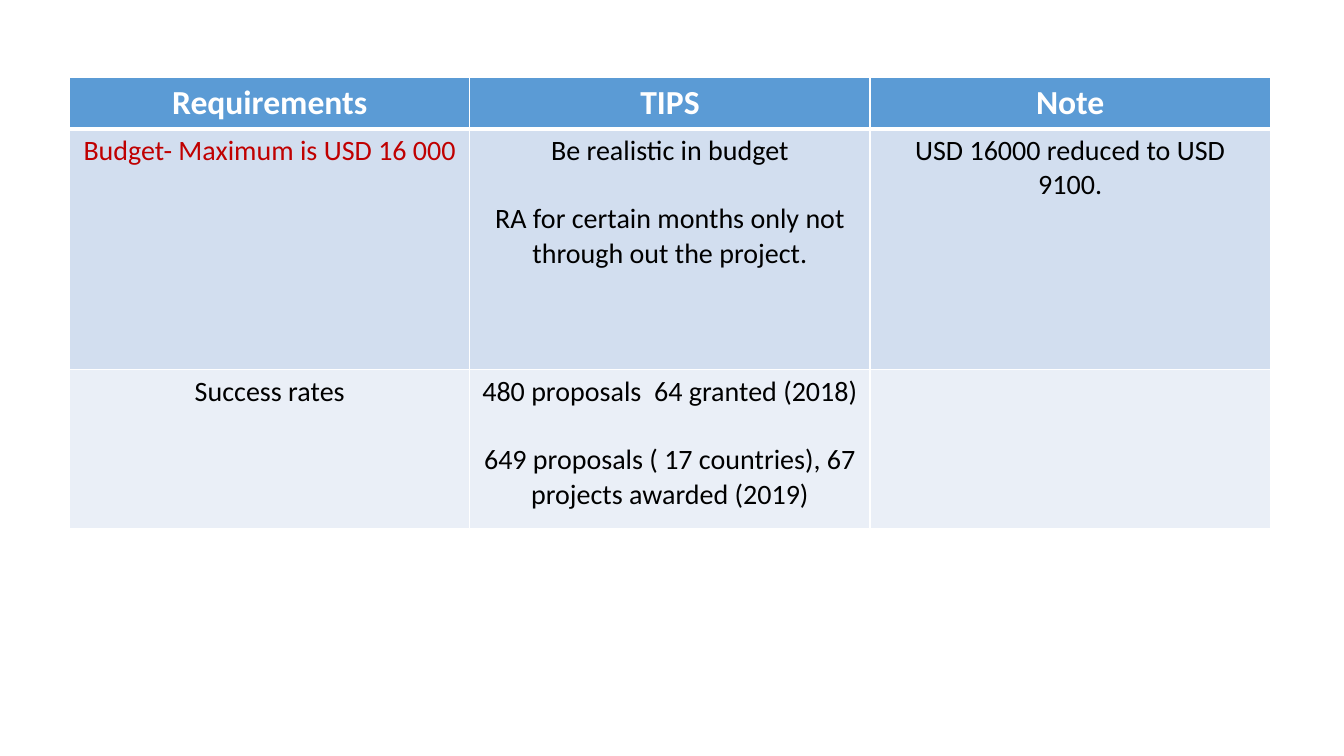
from dataclasses import dataclass

from lxml.etree import SubElement
from pptx import Presentation
from pptx.dml.color import RGBColor
from pptx.enum.text import PP_ALIGN
from pptx.oxml.ns import qn
from pptx.util import Inches, Pt


@dataclass(frozen=True)
class Theme:
    """Colours, type sizes and line widths of the slide."""
    font: str = "Calibri"
    head: str = "5B9BD5"
    bands: tuple = ("D2DEEF", "EAEFF7")
    white: str = "FFFFFF"
    ink: str = "000000"
    alert: str = "C00000"
    large: int = 24
    body: int = 20
    gap: float = 24.4
    thin: int = 1
    thick: int = 3


THEME = Theme()
LEFT, TOP, COL = 0.69, 0.77, 3.97
ROWS = (0.49, 2.39, 1.58)
CELLS = (
    (("Requirements",), ("TIPS",), ("Note",)),
    (
        ("Budget- Maximum is USD 16 000",),
        ("Be realistic in budget",
         "RA for certain months only not through out the project."),
        ("USD 16000 reduced to USD 9100.",),
    ),
    (
        ("Success rates",),
        ("480 proposals  64 granted (2018)",
         "649 proposals ( 17 countries), 67 projects awarded (2019)"),
        (),
    ),
)


def edge(cell, row):
    """Draw white cell borders, thick between header and body."""
    widths = {"L": THEME.thin, "R": THEME.thin,
              "T": THEME.thick if row == 1 else THEME.thin,
              "B": THEME.thick if row == 0 else THEME.thin}
    props = cell._tc.get_or_add_tcPr()
    for side, width in widths.items():
        line = SubElement(props, qn(f"a:ln{side}"), w=str(Pt(width)))
        fill = SubElement(line, qn("a:solidFill"))
        SubElement(fill, qn("a:srgbClr"), val=THEME.white)


def paint(cell, color):
    """Fill a cell with one colour."""
    cell.fill.solid()
    cell.fill.fore_color.rgb = RGBColor.from_string(color)


def write(cell, lines, size, color, bold):
    """Write centred paragraphs with a gap between them."""
    frame = cell.text_frame
    frame.text = "\n".join(lines)
    for index, para in enumerate(frame.paragraphs):
        para.alignment = PP_ALIGN.CENTER
        para.space_before = Pt(THEME.gap if index else 0)
        para.font.name = THEME.font
        para.font.size = Pt(size)
        para.font.bold = bold
        para.font.color.rgb = RGBColor.from_string(color)


def grid(slide):
    """Add the table of requirements, tips and notes."""
    count = len(CELLS[0])
    table = slide.shapes.add_table(
        len(ROWS), count, Inches(LEFT), Inches(TOP),
        Inches(COL * count), Inches(sum(ROWS))).table
    for column in table.columns:
        column.width = Inches(COL)
    for row, height in enumerate(ROWS):
        table.rows[row].height = Inches(height)
        for col, lines in enumerate(CELLS[row]):
            cell = table.cell(row, col)
            edge(cell, row)
            if row == 0:
                paint(cell, THEME.head)
                write(cell, lines, THEME.large, THEME.white, True)
            else:
                paint(cell, THEME.bands[row - 1])
                color = THEME.alert if (row, col) == (1, 0) else THEME.ink
                write(cell, lines, THEME.body, color, False)


def main():
    """Build and save the slide."""
    deck = Presentation()
    deck.slide_width, deck.slide_height = Inches(13.33), Inches(7.5)
    grid(deck.slides.add_slide(deck.slide_layouts[6]))
    deck.save("out.pptx")


if __name__ == "__main__":
    main()
